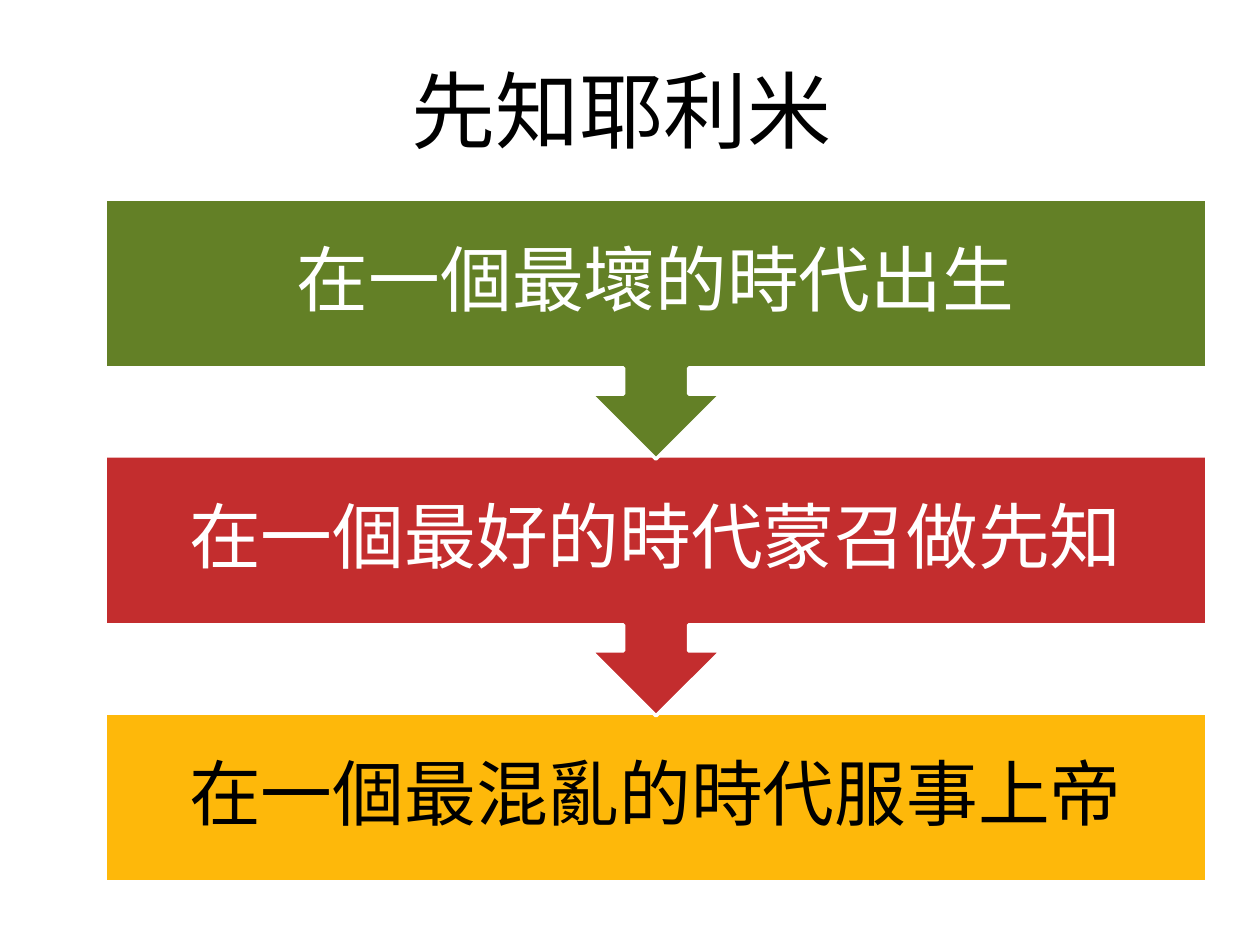
import pptx
import pptx.util
import pptx.dml.color
import pptx.enum.shapes
import pptx.enum.text

PX = 914400 // 126
HUES = {"green": "638026", "red": "C32D2E", "gold": "FEB80A",
        "white": "FFFFFF", "black": "000000"}
KIND = pptx.enum.shapes.MSO_SHAPE
ALIGN = pptx.enum.text.PP_ALIGN
ANCHOR = pptx.enum.text.MSO_ANCHOR
FIT = pptx.enum.text.MSO_AUTO_SIZE


def hue(name):
    return pptx.dml.color.RGBColor.from_string(HUES[name])


def write(frame, text, size, color, align, anchor, inset, wrap, fit, space):
    frame.word_wrap = wrap
    frame.auto_size = fit
    frame.vertical_anchor = anchor
    frame.margin_left = frame.margin_right = inset[0] * PX
    frame.margin_top = frame.margin_bottom = inset[1] * PX
    para = frame.paragraphs[0]
    para.alignment = align
    para.line_spacing = space
    run = para.add_run()
    run.text = text
    run.font.name = "Roboto"
    run.font.size = pptx.util.Pt(size)
    run.font.color.rgb = hue(color)


deck = pptx.Presentation()
deck.slide_width = 1260 * PX
deck.slide_height = 945 * PX
slide = deck.slides.add_slide(deck.slide_layouts[5])

# Title
title = slide.shapes.title
title.left, title.top, title.width, title.height = (
    n * PX for n in (399, 53, 450, 115))
write(title.text_frame, "先知耶利米", size=48, color="black",
      align=ALIGN.LEFT, anchor=ANCHOR.TOP, inset=(13, 6),
      wrap=False, fit=FIT.SHAPE_TO_FIT_TEXT, space=1.0)

# Steps, stacked from the last up so each arrow overlaps the next box
LEFT, TOP, WIDTH, BODY, FULL, STEP = 105, 199, 1102, 169, 260, 257
steps = [
    ("在一個最壞的時代出生", "green", "white"),
    ("在一個最好的時代蒙召做先知", "red", "white"),
    ("在一個最混亂的時代服事上帝", "gold", "black"),
]
last = len(steps) - 1
for i, (text, fill, ink) in reversed(list(enumerate(steps))):
    top = TOP + i * STEP
    kind, tall = (KIND.RECTANGLE, BODY) if i == last else (KIND.UP_ARROW_CALLOUT, FULL)
    box = slide.shapes.add_shape(kind, LEFT * PX, top * PX, WIDTH * PX, tall * PX)
    box.rotation = 0 if i == last else 180
    box.shadow.inherit = False
    box.fill.solid()
    box.fill.fore_color.rgb = hue(fill)
    box.line.color.rgb = hue("white")
    box.line.width = pptx.util.Pt(2)

    # Upright label over the body of the step
    label = slide.shapes.add_textbox(LEFT * PX, top * PX, WIDTH * PX, BODY * PX)
    write(label.text_frame, text, size=41, color=ink,
          align=ALIGN.CENTER, anchor=ANCHOR.MIDDLE, inset=(40, 40),
          wrap=True, fit=FIT.NONE, space=0.9)

deck.save("out.pptx")
